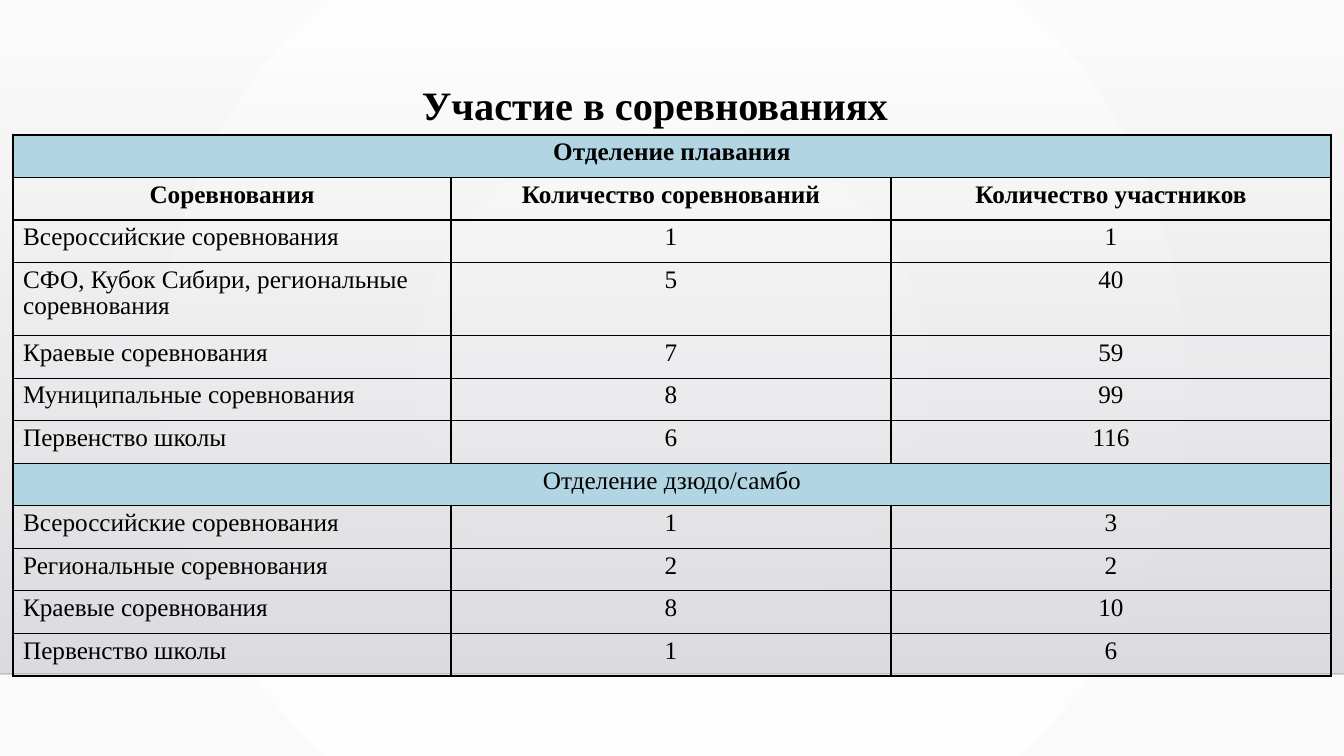
from dataclasses import dataclass

from lxml import etree
from pptx import Presentation
from pptx.dml.color import RGBColor
from pptx.enum.shapes import MSO_CONNECTOR, MSO_SHAPE
from pptx.enum.text import MSO_ANCHOR, PP_ALIGN
from pptx.oxml.ns import qn
from pptx.util import Pt

# Content: a row of one entry is a section band across all columns
TITLE = "Участие в соревнованиях"
ROWS = [
    ("Отделение плавания",),
    ("Соревнования", "Количество соревнований", "Количество участников"),
    ("Всероссийские соревнования", "1", "1"),
    ("СФО, Кубок Сибири, региональные соревнования", "5", "40"),
    ("Краевые соревнования", "7", "59"),
    ("Муниципальные соревнования", "8", "99"),
    ("Первенство школы", "6", "116"),
    ("Отделение дзюдо/самбо",),
    ("Всероссийские соревнования", "1", "3"),
    ("Региональные соревнования", "2", "2"),
    ("Краевые соревнования", "8", "10"),
    ("Первенство школы", "1", "6"),
]
HEADING_ROWS = 2
WRAPPED_ROW = 3


@dataclass(frozen=True)
class Theme:
    font: str = "Times New Roman"
    title_size: float = 28.8
    table_size: float = 18
    text: str = "000000"
    band: str = "B2D5E3"
    border: str = "000000"
    rule: str = "000001"
    page: tuple = (("FFFFFF", 100), ("FAFAFA", 100))
    panel: tuple = (("DCDCE0", 0), ("DEDEE2", 100))


THEME = Theme()

# Layout in px
PX = 914400 / 100.8
PAGE_W, PAGE_H = 1344, 756
PANEL_TOP, PANEL_BOTTOM = 51, 674
TITLE_BOX = (126, 80, 1058, 55)
TABLE_BOX = (13, 135, 1318, 541)
COLUMNS = (438, 440, 440)
WRAPPED_H = 73


def px(value):
    return round(value * PX)


def colour(code):
    return RGBColor.from_string(code)


def add_alpha(parent, percent):
    for code in parent.iter(qn("a:srgbClr")):
        etree.SubElement(code, qn("a:alpha"), val=str(percent * 1000))


def set_gradient(fill, owner, stops, radial=False):
    fill.gradient()
    gradient = next(owner.iter(qn("a:gradFill")))
    for child in list(gradient):
        gradient.remove(child)
    stop_list = etree.SubElement(gradient, qn("a:gsLst"))
    for index, (code, opacity) in enumerate(stops):
        stop = etree.SubElement(stop_list, qn("a:gs"), pos=str(index * 100000))
        etree.SubElement(stop, qn("a:srgbClr"), val=code)
        add_alpha(stop, opacity)
    if radial:
        shade = etree.SubElement(gradient, qn("a:path"), path="circle")
        etree.SubElement(shade, qn("a:fillToRect"),
                         **dict.fromkeys("ltrb", "50000"))
    else:
        etree.SubElement(gradient, qn("a:lin"), ang="5400000", scaled="0")


def write(frame, text, size, bold, align, spacing):
    para = frame.paragraphs[0]
    para.alignment = align
    para.line_spacing = spacing
    span = para.add_run()
    span.text = text
    span.font.name = THEME.font
    span.font.size = Pt(size)
    span.font.bold = bold
    span.font.color.rgb = colour(THEME.text)


def set_borders(cell):
    properties = cell._tc.get_or_add_tcPr()
    for index, side in enumerate(("lnL", "lnR", "lnT", "lnB")):
        line = etree.Element(qn(f"a:{side}"), w=str(Pt(1)))
        solid = etree.SubElement(line, qn("a:solidFill"))
        etree.SubElement(solid, qn("a:srgbClr"), val=THEME.border)
        properties.insert(index, line)


def add_backdrop(page):
    set_gradient(page.background.fill, page._element, THEME.page, radial=True)
    panel = page.shapes.add_shape(
        MSO_SHAPE.RECTANGLE, 0, px(PANEL_TOP), px(PAGE_W), px(PANEL_BOTTOM - PANEL_TOP))
    panel.shadow.inherit = False
    panel.line.fill.background()
    set_gradient(panel.fill, panel._element, THEME.panel)

    rule = page.shapes.add_connector(
        MSO_CONNECTOR.STRAIGHT, 0, px(PANEL_BOTTOM), px(PAGE_W), px(PANEL_BOTTOM))
    rule.line.width = Pt(1)
    rule.line.color.rgb = colour(THEME.rule)
    add_alpha(rule._element, 20)
    etree.SubElement(rule._element.spPr, qn("a:effectLst"))


def add_title(page):
    box = page.shapes.add_textbox(*map(px, TITLE_BOX))
    box.text_frame.word_wrap = True
    box.text_frame.vertical_anchor = MSO_ANCHOR.MIDDLE
    write(box.text_frame, TITLE, THEME.title_size, True, PP_ALIGN.CENTER, 0.9)


def add_results(page):
    table = page.shapes.add_table(
        len(ROWS), len(COLUMNS), *map(px, TABLE_BOX)).table
    table.first_row = table.horz_banding = False
    for column, width in zip(table.columns, COLUMNS):
        column.width = px(width)

    single_h = (TABLE_BOX[3] - WRAPPED_H) / (len(ROWS) - 1)
    for r, entries in enumerate(ROWS):
        is_band = len(entries) == 1
        table.rows[r].height = px(WRAPPED_H if r == WRAPPED_ROW else single_h)
        for cell in table.rows[r].cells:
            if is_band:
                cell.fill.solid()
                cell.fill.fore_color.rgb = colour(THEME.band)
            else:
                cell.fill.background()
            set_borders(cell)
        if is_band:
            table.cell(r, 0).merge(table.cell(r, len(COLUMNS) - 1))
        for c, text in enumerate(entries):
            is_label = c == 0 and not is_band and r >= HEADING_ROWS
            write(table.cell(r, c).text_frame, text, THEME.table_size,
                  r < HEADING_ROWS,
                  PP_ALIGN.LEFT if is_label else PP_ALIGN.CENTER, 0.93)


def main():
    deck = Presentation()
    deck.slide_width, deck.slide_height = px(PAGE_W), px(PAGE_H)
    page = deck.slides.add_slide(deck.slide_layouts[6])
    add_backdrop(page)
    add_title(page)
    add_results(page)
    deck.save("out.pptx")


if __name__ == "__main__":
    main()
